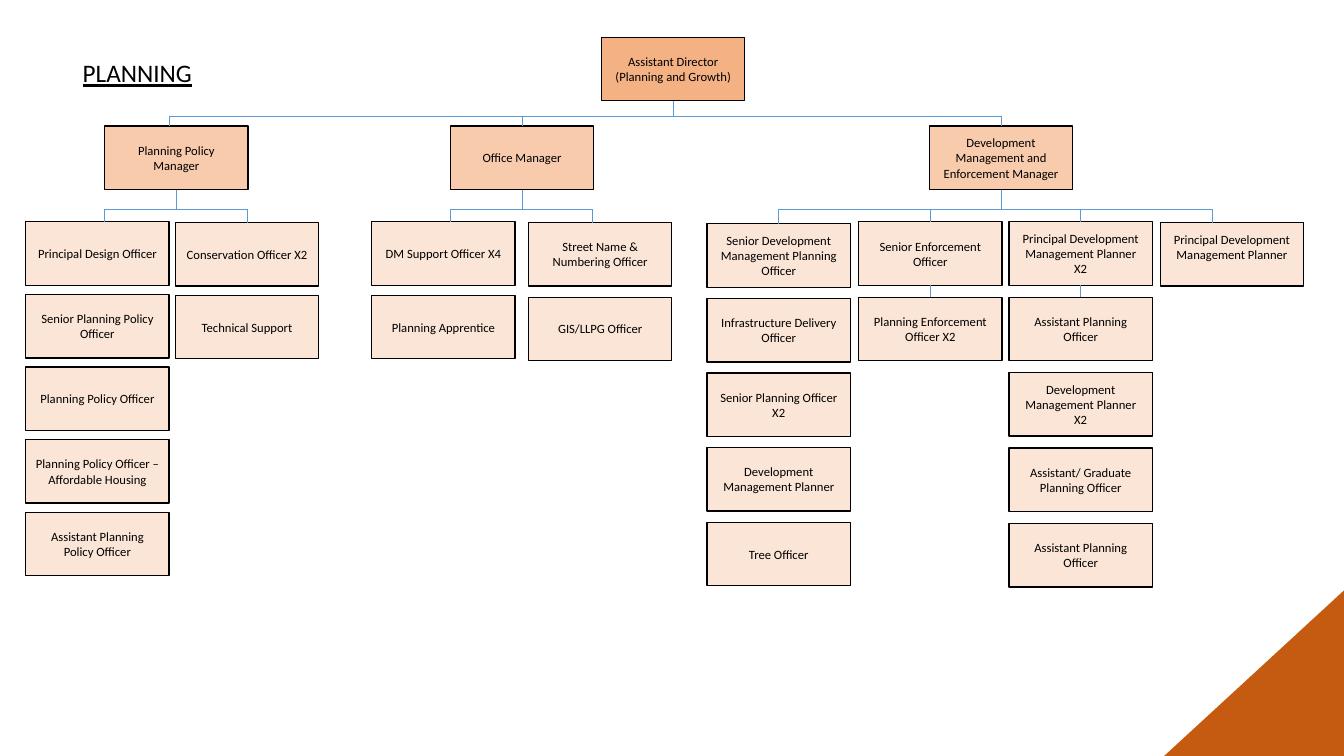
from lxml.etree import SubElement
from pptx import Presentation
from pptx.dml.color import RGBColor
from pptx.enum.shapes import MSO_CONNECTOR as LINE, MSO_SHAPE as SHAPE
from pptx.enum.text import MSO_ANCHOR as ANCHOR, PP_ALIGN as ALIGN
from pptx.oxml.ns import qn
from pptx.util import Cm, Pt

SLIDE_W, SLIDE_H = 33.87, 19.05
BOX_W, BOX_H = 3.61, 1.6
MANAGER_TOP, MANAGER_BUS, TEAM_BUS = 3.18, 2.92, 5.27
TOP, BOTTOM = 0, 2  # connection sites of a rectangle

DIRECTOR = ("Assistant Director (Planning and Growth)", 15.16, 0.94)

# Each manager: left, x of the line from above (None = box middle), columns.
# Each column: left, top, row pitch, x of the line from above, linked rows, roles.
MANAGERS = [
    ("Planning Policy Manager", 2.64, 4.27, [
        (0.65, 5.59, 1.83, 2.64, False, [
            "Principal Design Officer",
            "Senior Planning Policy Officer",
            "Planning Policy Officer",
            "Planning Policy Officer – Affordable Housing",
            "Assistant Planning Policy Officer"]),
        (4.42, 5.61, 1.83, 6.23, False, [
            "Conservation Officer X2",
            "Technical Support"])]),
    ("Office Manager", 11.35, None, [
        (9.37, 5.59, 1.85, 11.35, False, [
            "DM Support Officer X4",
            "Planning Apprentice"]),
        (13.32, 5.61, 1.88, 14.94, False, [
            "Street Name & Numbering Officer",
            "GIS/LLPG Officer"])]),
    ("Development Management and Enforcement Manager", 23.42, None, [
        (17.82, 5.64, 1.88, None, False, [
            "Senior Development Management Planning Officer",
            "Infrastructure Delivery Officer",
            "Senior Planning Officer X2",
            "Development Management Planner",
            "Tree Officer"]),
        (21.64, 5.59, 1.9, None, True, [
            "Senior Enforcement Officer",
            "Planning Enforcement Officer X2"]),
        (25.43, 5.59, 1.9, None, True, [
            "Principal Development Management Planner X2",
            "Assistant Planning Officer",
            "Development Management Planner X2",
            "Assistant/ Graduate Planning Officer",
            "Assistant Planning Officer"]),
        (29.24, 5.61, 1.9, 30.56, False, [
            "Principal Development Management Planner"])]),
]


def rgb(value):
    return RGBColor.from_string(value)


def write(sp, text, size=9, align=ALIGN.CENTER, anchor=ANCHOR.MIDDLE, underline=None):
    tf = sp.text_frame
    tf.word_wrap = True
    tf.vertical_anchor = anchor
    p = tf.paragraphs[0]
    p.alignment = align
    r = p.add_run()
    r.text = text
    r.font.name, r.font.size, r.font.underline = "Calibri", Pt(size), underline
    r.font.color.rgb = rgb("000000")


def add_box(text, x, y, fill):
    sp = s.shapes.add_shape(SHAPE.RECTANGLE, Cm(x), Cm(y), Cm(BOX_W), Cm(BOX_H))
    sp.shadow.inherit = False
    sp.fill.solid()
    sp.fill.fore_color.rgb = rgb(fill)
    sp.line.color.rgb = rgb("000000")
    sp.line.width = Pt(1)
    write(sp, text)
    return sp


def add_line(x1, y1, x2, y2, above=None, below=None):
    """Draw a line, joined to the box above and the box below where given."""
    cxn = s.shapes.add_connector(LINE.STRAIGHT, Cm(x1), Cm(y1), Cm(x2), Cm(y2))
    cxn.line.color.rgb = rgb("5B9BD5")
    cxn.line.width = Pt(0.5)
    SubElement(cxn._element.spPr, qn("a:effectLst"))
    if above is not None:
        cxn.begin_connect(above, BOTTOM)
    if below is not None:
        cxn.end_connect(below, TOP)


def drop_to(box, left, x, bus, top):
    """Lead from a bus down to a box and return the x used."""
    middle = left + BOX_W / 2
    if x is None:
        add_line(middle, bus, middle, top, below=box)
        return middle
    add_line(x, bus, x, top)
    return x


def rise_from(box, left, top, bus):
    middle = left + BOX_W / 2
    add_line(middle, top + BOX_H, middle, bus, above=box)


def add_bus(drops, y):
    add_line(min(drops), y, max(drops), y)


def add_column(left, top, pitch, drop, linked, roles):
    boxes = [add_box(role, left, top + i * pitch, "FBE5D6")
             for i, role in enumerate(roles)]
    if linked:
        middle = left + BOX_W / 2
        add_line(middle, top + BOX_H, middle, top + pitch, boxes[0], boxes[1])
    return boxes, drop_to(boxes[0], left, drop, TEAM_BUS, top)


prs = Presentation()
prs.slide_width, prs.slide_height = Cm(SLIDE_W), Cm(SLIDE_H)
s = prs.slides.add_slide(prs.slide_layouts[5])

title = s.shapes.title
title.left, title.top, title.width, title.height = Cm(1.83), Cm(1.32), Cm(BOX_W), Cm(BOX_H)
write(title, "PLANNING", size=18, align=ALIGN.LEFT, anchor=ANCHOR.TOP, underline=True)

corner_w, corner_h = 4.53, 4.17
corner = s.shapes.add_shape(SHAPE.RIGHT_TRIANGLE, Cm(SLIDE_W - corner_w),
                            Cm(SLIDE_H - corner_h), Cm(corner_w), Cm(corner_h))
corner.shadow.inherit = False
corner.fill.solid()
corner.fill.fore_color.rgb = rgb("C55A11")
corner.line.fill.background()
corner._element.spPr.find(qn("a:xfrm")).set("flipH", "1")

name, left, top = DIRECTOR
rise_from(add_box(name, left, top, "F4B183"), left, top, MANAGER_BUS)

manager_drops = []
for name, left, drop, columns in MANAGERS:
    manager = add_box(name, left, MANAGER_TOP, "F8CBAD")
    manager_drops.append(drop_to(manager, left, drop, MANAGER_BUS, MANAGER_TOP))
    rise_from(manager, left, MANAGER_TOP, TEAM_BUS)
    team_drops = []
    for column in columns:
        boxes, x = add_column(*column)
        team_drops.append(x)
    add_bus(team_drops, TEAM_BUS)
add_bus(manager_drops, MANAGER_BUS)

# The last role sits one line higher in its box.
boxes[0].text_frame.margin_bottom = Cm(0.51)

prs.save("out.pptx")
